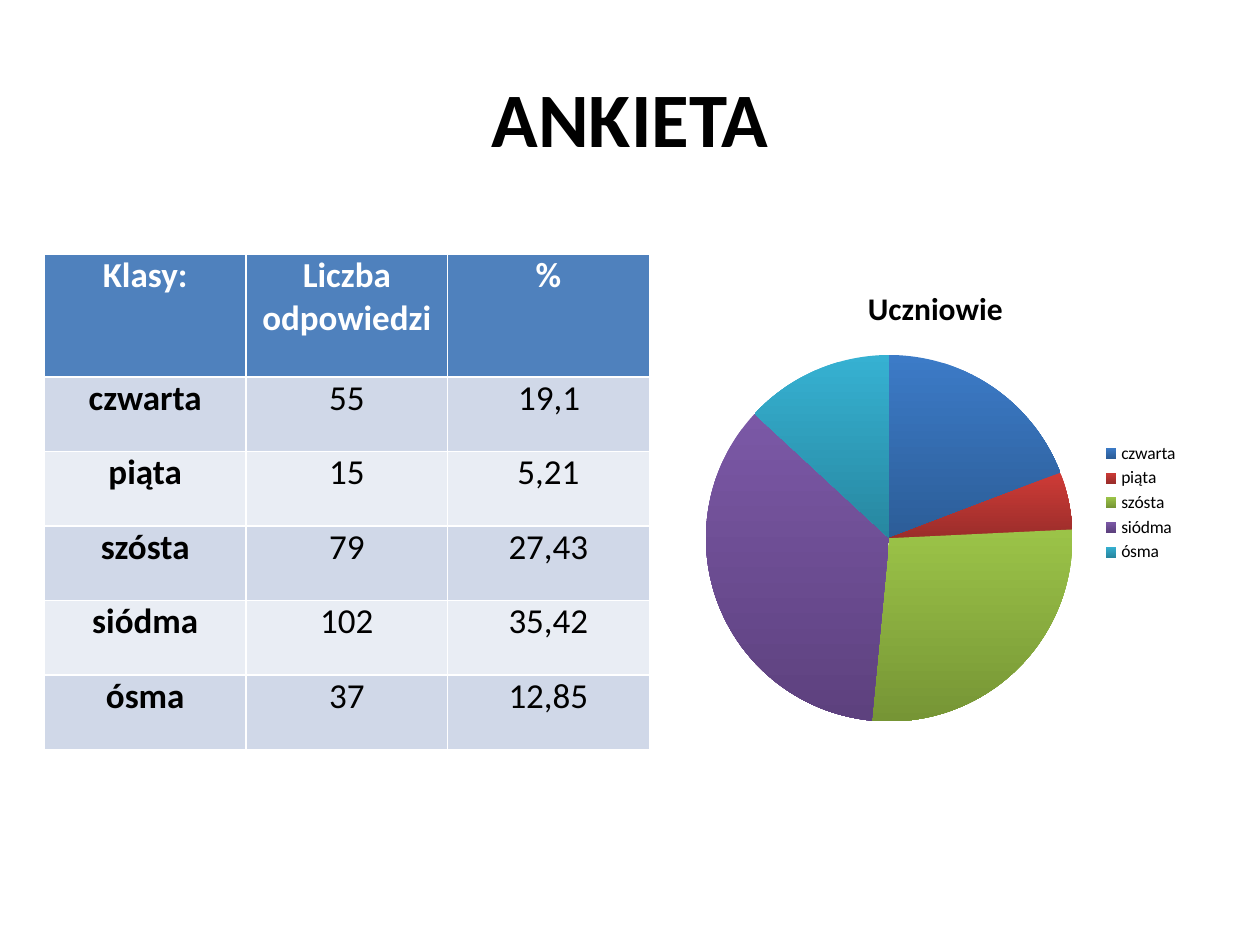
from dataclasses import dataclass

from lxml import etree
from pptx import Presentation
from pptx.chart.data import CategoryChartData
from pptx.dml.color import RGBColor
from pptx.enum.chart import XL_CHART_TYPE, XL_LEGEND_POSITION
from pptx.enum.text import MSO_ANCHOR, PP_ALIGN
from pptx.oxml.ns import qn
from pptx.util import Pt

PIE = XL_CHART_TYPE.PIE
RIGHT = XL_LEGEND_POSITION.RIGHT
MIDDLE = MSO_ANCHOR.MIDDLE
CENTER = PP_ALIGN.CENTER
JUSTIFY = PP_ALIGN.JUSTIFY


@dataclass(frozen=True)
class Theme:
    font: str = "Calibri"
    ink: str = "000000"
    white: str = "FFFFFF"
    head: str = "4F81BD"
    bands: tuple = ("D0D8E8", "E9EDF4")
    title: float = 44
    table: float = 20
    label: float = 18
    legend: float = 10


@dataclass(frozen=True)
class Box:
    left: float
    top: float
    width: float
    height: float

    def points(self) -> tuple:
        return Pt(self.left), Pt(self.top), Pt(self.width), Pt(self.height)


@dataclass(frozen=True)
class Grade:
    name: str
    count: str
    share: str
    value: int
    light: str
    dark: str


THEME = Theme()
HEADS = ("Klasy:", "Liczba odpowiedzi", "%")
GRADES = (
    Grade("czwarta", "55", "19,1", 19, "3C7BC7", "2C5D98"),
    Grade("piąta", "15", "5,21", 5, "CE3B37", "9B2D2A"),
    Grade("szósta", "79", "27,43", 27, "9BC348", "769535"),
    Grade("siódma", "102", "35,42", 35, "7B58A6", "5D417E"),
    Grade("ósma", "37", "12,85", 13, "36B1D2", "2787A0"),
)
TITLE = Box(36, 21.6, 648, 90)
TABLE = Box(25.4, 145.4, 345.6, 283)
CHART = Box(388, 151.2, 293, 272)
HEAD_ROW = 70
BODY_ROW = 42.6
INDENT = 35.3
PLOT = {"x": 0.05, "y": 0.19, "w": 0.72, "h": 0.77}


def style(font, size: float, color: str, bold: bool = False) -> None:
    font.name = THEME.font
    font.size = Pt(size)
    font.bold = bold
    font.color.rgb = RGBColor.from_string(color)


def write(frame, text: str, size: float, color: str, bold: bool):
    para = frame.paragraphs[0]
    para.alignment = CENTER
    run = para.add_run()
    run.text = text
    style(run.font, size, color, bold)
    return para


def fill_cell(cell, text: str, fill: str, color: str, bold: bool):
    cell.margin_left = cell.margin_right = Pt(5)
    cell.margin_top = cell.margin_bottom = 0
    cell.fill.solid()
    cell.fill.fore_color.rgb = RGBColor.from_string(fill)
    return write(cell.text_frame, text, THEME.table, color, bold)


def draw_table(slide) -> None:
    table = slide.shapes.add_table(len(GRADES) + 1, len(HEADS), *TABLE.points()).table
    for col in table.columns:
        col.width = Pt(TABLE.width / len(HEADS))
    for row in table.rows:
        row.height = Pt(BODY_ROW)
    table.rows[0].height = Pt(HEAD_ROW)
    for col, text in enumerate(HEADS):
        fill_cell(table.cell(0, col), text, THEME.head, THEME.white, True)
    for row, grade in enumerate(GRADES):
        band = THEME.bands[row % 2]
        for col, text in enumerate((grade.name, grade.count, grade.share)):
            para = fill_cell(table.cell(row + 1, col), text, band, THEME.ink, col == 0)
            if (row, col) == (0, 2):
                para.alignment = JUSTIFY
                para._p.get_or_add_pPr().set("indent", str(Pt(INDENT)))


def place_plot(chart) -> None:
    area = chart._chartSpace.chart.plotArea
    for old in area.findall(qn("c:layout")):
        area.remove(old)
    layout = etree.Element(qn("c:layout"))
    manual = etree.SubElement(layout, qn("c:manualLayout"))
    rules = {"layoutTarget": "inner", "xMode": "edge", "yMode": "edge", **PLOT}
    for tag, value in rules.items():
        etree.SubElement(manual, qn(f"c:{tag}")).set("val", str(value))
    area.insert(0, layout)


def draw_chart(slide) -> None:
    data = CategoryChartData()
    data.categories = [grade.name for grade in GRADES]
    data.add_series("Uczniowie", [grade.value for grade in GRADES])
    chart = slide.shapes.add_chart(PIE, *CHART.points(), data).chart
    style(chart.font, THEME.legend, THEME.ink)
    chart.has_title = True
    write(chart.chart_title.text_frame, "Uczniowie", THEME.label, THEME.ink, True)
    chart.chart_title.include_in_layout = False
    chart.has_legend = True
    chart.legend.position = RIGHT
    chart.legend.include_in_layout = False
    plot = chart.plots[0]
    plot.vary_by_categories = True
    for index, grade in enumerate(GRADES):
        fill = plot.series[0].points[index].format.fill
        fill.gradient()
        fill.gradient_angle = 270
        for stop, color in zip(fill.gradient_stops, (grade.light, grade.dark)):
            stop.color.rgb = RGBColor.from_string(color)
    place_plot(chart)


def draw_title(slide) -> None:
    title = slide.shapes.title
    title.left, title.top, title.width, title.height = TITLE.points()
    title.text_frame.vertical_anchor = MIDDLE
    write(title.text_frame, "ANKIETA", THEME.title, THEME.ink, True)


def main() -> None:
    deck = Presentation()
    deck.slide_width, deck.slide_height = Pt(720), Pt(540)
    slide = deck.slides.add_slide(deck.slide_layouts[5])
    draw_title(slide)
    draw_table(slide)
    draw_chart(slide)
    deck.save("out.pptx")


if __name__ == "__main__":
    main()
